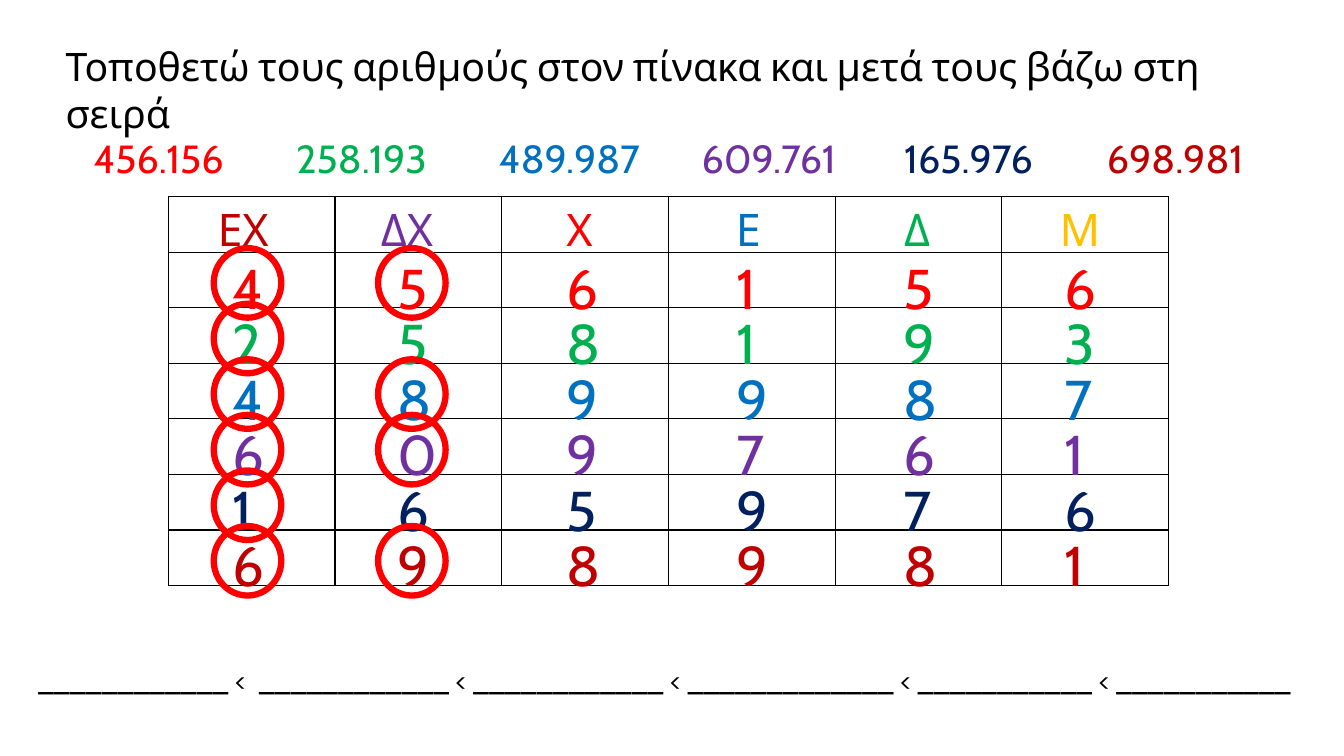
import pptx
import pptx.dml.color
import pptx.enum.shapes
import pptx.enum.text
import pptx.oxml
import pptx.oxml.ns
import pptx.util

Inches = pptx.util.Inches
Pt = pptx.util.Pt

FONT = "Cabin"
COLORS = {
    "black": "000000",
    "red": "FF0000",
    "green": "00B050",
    "blue": "0070C0",
    "purple": "7030A0",
    "navy": "002060",
    "crimson": "C00000",
    "gold": "FFC000",
}
NUMBERS = [
    ("456.156", "red"),
    ("258.193", "green"),
    ("489.987", "blue"),
    ("609.761", "purple"),
    ("165.976", "navy"),
    ("698.981", "crimson"),
]
PLACE_VALUES = [
    ("ΕΧ", "crimson", 0.39, 0.8),
    ("ΔΧ", "purple", 2.01, 0.8),
    ("Χ", "red", 3.85, 0.5),
    ("Ε", "blue", 5.53, 0.5),
    ("Δ", "green", 7.2, 0.5),
    ("Μ", "gold", 8.74, 0.58),
]
DIGIT_LEFTS = [0.54, 2.17, 3.85, 5.54, 7.19, 8.79]
CIRCLED_ROWS = {0: range(6), 1: (0, 2, 3, 5)}
ORDER_LINE = "____________ <  ____________ < ____________ < _____________ < ___________ < ___________"


def rgb(color):
    return pptx.dml.color.RGBColor.from_string(COLORS[color])


def write(frame, text, size=28, color="black"):
    frame.word_wrap = True
    frame.auto_size = pptx.enum.text.MSO_AUTO_SIZE.NONE
    frame.vertical_anchor = pptx.enum.text.MSO_ANCHOR.TOP
    paragraph = frame.paragraphs[0]
    paragraph.alignment = pptx.enum.text.PP_ALIGN.LEFT
    run = paragraph.add_run()
    run.text = text
    run.font.name = FONT
    run.font.size = Pt(size)
    run.font.color.rgb = rgb(color)


def add_label(slide, text, left, top, width, height, **style):
    label = slide.shapes.add_textbox(Inches(left), Inches(top), Inches(width), Inches(height))
    write(label.text_frame, text, **style)


def add_instruction(slide, left, top, width, height):
    instruction = slide.shapes.title
    instruction.left, instruction.top = Inches(left), Inches(top)
    instruction.width, instruction.height = Inches(width), Inches(height)
    write(instruction.text_frame, "Τοποθετώ τους αριθμούς στον πίνακα και μετά τους βάζω στη σειρά")


def add_numbers(slide, left, top, width, height):
    label_width = 1.63
    pitch = (width - label_width) / (len(NUMBERS) - 1)
    for index, (number, color) in enumerate(NUMBERS):
        add_label(slide, number, left + index * pitch, top, label_width, height, color=color)


def outline_cell(cell):
    properties = cell._tc.get_or_add_tcPr()
    for side in ("lnL", "lnR", "lnT", "lnB"):
        properties.append(pptx.oxml.parse_xml(
            f'<a:{side} {pptx.oxml.ns.nsdecls("a")} w="{Pt(1)}"><a:solidFill>'
            f'<a:srgbClr val="{COLORS["black"]}"/></a:solidFill></a:{side}>'))
    cell.fill.background()


def add_grid(slide, left, top, width, height):
    grid = slide.shapes.add_table(
        len(NUMBERS) + 1, len(PLACE_VALUES),
        Inches(left), Inches(top), Inches(width), Inches(height)).table
    grid.first_row = False
    grid.horz_banding = False
    for cell in grid.iter_cells():
        outline_cell(cell)


def add_circle(slide, left, top):
    circle = slide.shapes.add_shape(
        pptx.enum.shapes.MSO_SHAPE.OVAL,
        Inches(left), Inches(top), Inches(0.67), Inches(0.69))
    circle.shadow.inherit = False
    circle.fill.background()
    circle.line.color.rgb = rgb("red")
    circle.line.width = Pt(4.5)


def add_place_value_table(slide, left, top, width, height):
    add_grid(slide, left, top, width, height)
    for name, color, offset, label_width in PLACE_VALUES:
        add_label(slide, name, left + offset, top, label_width, 0.64, size=32, color=color)

    row_height = height / (len(NUMBERS) + 1)
    digit_tops = [top - 0.04 + row * row_height for row in range(1, len(NUMBERS) + 1)]
    for (number, color), digit_top in zip(NUMBERS, digit_tops):
        for digit, offset in zip(number.replace(".", ""), DIGIT_LEFTS):
            add_label(slide, digit, left + offset, digit_top, 0.51, 0.77, size=40, color=color)

    for column, rows in CIRCLED_ROWS.items():
        for row in rows:
            add_circle(slide, left + DIGIT_LEFTS[column] - 0.09, digit_tops[row])


def add_order_line(slide, left, top, width, height):
    add_label(slide, ORDER_LINE, left, top, width, height, size=20)


def main():
    presentation = pptx.Presentation()
    presentation.slide_width = Inches(13.33)
    presentation.slide_height = Inches(7.5)
    slide = presentation.slides.add_slide(presentation.slide_layouts.get_by_name("Title Only"))
    add_instruction(slide, 0.55, 0.37, 12.11, 0.57)
    add_numbers(slide, 0.83, 1.28, 11.68, 0.57)
    add_place_value_table(slide, 1.67, 1.95, 9.92, 3.86)
    add_order_line(slide, 0.28, 6.53, 12.94, 0.44)
    presentation.save("out.pptx")


if __name__ == "__main__":
    main()
